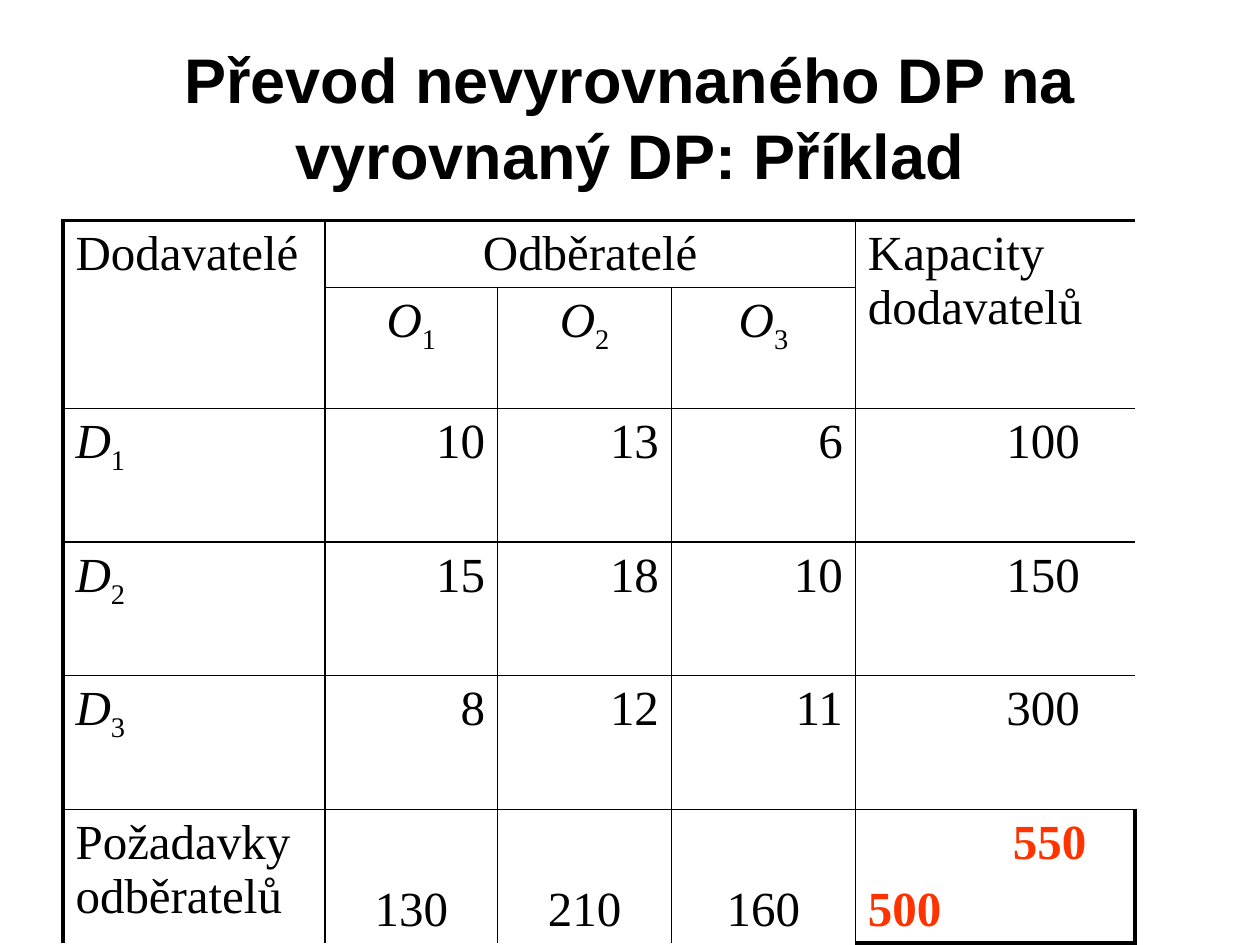
from dataclasses import dataclass
from itertools import product

from lxml.etree import SubElement
from pptx import Presentation
from pptx.dml.color import RGBColor
from pptx.enum.text import MSO_ANCHOR, PP_ALIGN
from pptx.oxml.ns import qn
from pptx.table import Table, _Cell
from pptx.util import Inches, Pt

COLORS = {"ink": "000000", "total": "FF3300"}
COLUMN_WIDTHS = [2.08, 0.68, 0.69, 0.69, 0.69, 0.69, 0.77, 1.15, 1.07]
ROW_HEIGHTS = [0.53, 0.96] + [0.53] * 8
COSTS = [[10, 13, 6], [15, 18, 10], [8, 12, 11]]
CAPACITIES = [100, 150, 300]
DEMANDS = [130, 210, 160]
THIN, THICK = 1, 2.25


@dataclass
class Block:
    """A bordered group of cells; an unmerged one holds its text top right."""
    row: int
    column: int
    rows: int
    columns: int
    text: str = ""
    subscript: str = ""
    align: PP_ALIGN = PP_ALIGN.LEFT
    anchor: MSO_ANCHOR = MSO_ANCHOR.TOP
    left_margin: float = 0.1
    merged: bool = True


def write_cell(cell: _Cell, text: str, subscript: str = "",
               align: PP_ALIGN = PP_ALIGN.LEFT, color: str = "ink",
               bold: bool = False) -> None:
    para = cell.text_frame.paragraphs[0]
    para.alignment = align
    para.font.name = "Times New Roman"
    para.font.size = Pt(28)
    para.font.bold = bold
    para.font.color.rgb = RGBColor.from_string(COLORS[color])
    span = para.add_run()
    span.text = text
    if subscript:
        span.font.italic = True
        index = para.add_run()
        index.text = subscript
        index._r.get_or_add_rPr().set("baseline", "-25000")


def set_border(cell: _Cell, side: str, width: float) -> None:
    """Draw one side of a cell, or clear it when the width is zero."""
    line = SubElement(cell._tc.get_or_add_tcPr(), qn(f"a:ln{side}"), w=str(Pt(width)))
    if width:
        fill = SubElement(line, qn("a:solidFill"))
        SubElement(fill, qn("a:srgbClr"), val=COLORS["ink"])
    else:
        SubElement(line, qn("a:noFill"))


def draw_block(table: Table, block: Block) -> None:
    bottom, right = block.row + block.rows - 1, block.column + block.columns - 1
    last_row, last_column = len(ROW_HEIGHTS) - 1, len(COLUMN_WIDTHS) - 1
    for row, column in product(range(block.row, bottom + 1),
                               range(block.column, right + 1)):
        cell = table.cell(row, column)
        edges = [("L", column, block.column, 0), ("R", column, right, last_column),
                 ("T", row, block.row, 0), ("B", row, bottom, last_row)]
        for side, place, block_edge, table_edge in edges:
            width = THICK if place == table_edge else THIN
            set_border(cell, side, width if place == block_edge else 0)
        cell.fill.background()
    first = table.cell(block.row, block.column)
    if block.merged:
        first.merge(table.cell(bottom, right))
    target = first if block.merged else table.cell(block.row, right)
    target.vertical_anchor = block.anchor
    target.margin_left = Inches(block.left_margin)
    if block.text:
        write_cell(target, block.text, block.subscript, block.align)


def table_blocks() -> list[Block]:
    center, right = PP_ALIGN.CENTER, PP_ALIGN.RIGHT
    blocks = [
        Block(0, 0, 2, 1, "Dodavatelé"),
        Block(0, 1, 1, 6, "Odběratelé", align=center),
        Block(0, 7, 2, 2, "Kapacity dodavatelů"),
        Block(8, 0, 2, 1, "Požadavky odběratelů"),
        Block(8, 7, 2, 2, merged=False),
    ]
    for number, demand in enumerate(DEMANDS):
        column = 1 + 2 * number
        blocks.append(Block(1, column, 1, 2, "O", str(number + 1), center))
        blocks.append(Block(8, column, 2, 2, str(demand), align=center,
                            anchor=MSO_ANCHOR.BOTTOM))
    for number, (costs, capacity) in enumerate(zip(COSTS, CAPACITIES)):
        row = 2 + 2 * number
        blocks.append(Block(row, 0, 2, 1, "D", str(number + 1)))
        blocks.append(Block(row, 7, 2, 2, str(capacity), align=center,
                            left_margin=0.86))
        for index, cost in enumerate(costs):
            blocks.append(Block(row, 1 + 2 * index, 2, 2, str(cost),
                                align=right, merged=False))
    return blocks


def main() -> None:
    deck = Presentation()
    deck.slide_width, deck.slide_height = Inches(10), Inches(7.5)
    page = deck.slides.add_slide(deck.slide_layouts[5])

    title = page.shapes.title
    title.left, title.top = Inches(0.5), Inches(0.3)
    title.width, title.height = Inches(9), Inches(1.25)
    title.text_frame.text = "Převod nevyrovnaného DP na vyrovnaný DP: Příklad"
    title.text_frame.vertical_anchor = MSO_ANCHOR.MIDDLE
    heading = title.text_frame.paragraphs[0]
    heading.alignment = PP_ALIGN.CENTER
    heading.font.name = "Arial"
    heading.font.size = Pt(36)
    heading.font.bold = True
    heading.font.color.rgb = RGBColor.from_string(COLORS["ink"])

    table = page.shapes.add_table(
        len(ROW_HEIGHTS), len(COLUMN_WIDTHS), Inches(0.5), Inches(1.75),
        Inches(sum(COLUMN_WIDTHS)), Inches(sum(ROW_HEIGHTS))).table
    table.first_row = table.horz_banding = False
    for column, width in zip(table.columns, COLUMN_WIDTHS):
        column.width = Inches(width)
    for row, height in zip(table.rows, ROW_HEIGHTS):
        row.height = Inches(height)
    for block in table_blocks():
        draw_block(table, block)
    write_cell(table.cell(8, 8), "550", color="total", bold=True)
    write_cell(table.cell(9, 7), "500", color="total", bold=True)

    deck.save("out.pptx")


if __name__ == "__main__":
    main()
